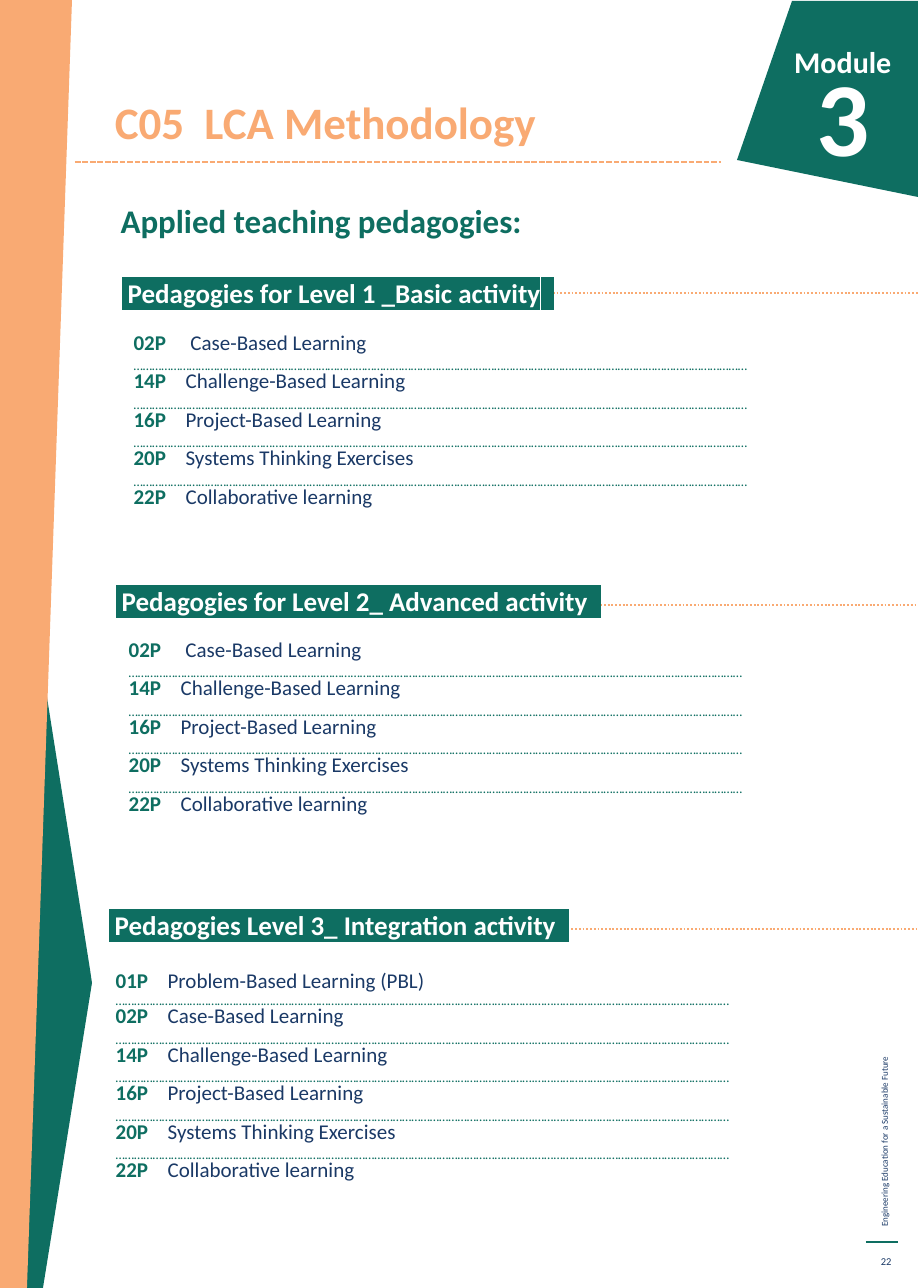
from lxml import etree
from pptx import Presentation
from pptx import util as u
from pptx.dml.color import RGBColor
from pptx.enum import dml, shapes, text
from pptx.oxml import ns

GREEN, PEACH, NAVY, WHITE = "0E6E61", "F9AA73", "1A3966", "FFFFFF"
SCALE = 914400 / 108
WIDE, HIGH = 918, 1288
RULE = "……………………………………………………………………………………………………………………….………………………………………………………"
RULE_PX = 619
COMMON = [("14P", " \tChallenge-Based Learning"), ("16P", " \tProject-Based Learning"),
          ("20P", " \tSystems Thinking Exercises"), ("22P", " \tCollaborative learning")]
CASE = [("02P", "\t Case-Based Learning")]
FIRST = [("01P", " \tProblem-Based Learning (PBL)"), ("02P", " \tCase-Based Learning")]
LEVELS = [
    (" Pedagogies for Level 1 _Basic activity", (110, 284), (276, 293), (122, 330), CASE + COMMON, 12.8),
    (" Pedagogies for Level 2_ Advanced activity", (104, 592), (271, 605), (117, 637), CASE + COMMON, 12.8),
    (" Pedagogies Level 3_ Integration activity", (97, 916), (272, 929), (104, 968), FIRST + COMMON, 10.8),
]


def px(num):
    return u.Emu(round(num * SCALE))


def color(code):
    return RGBColor.from_string(code)


class Page:
    """Holds the style and the current slide, with a method for each kind of element."""

    font = "Calibri"

    def __init__(self, deck):
        self.slide = deck.slides.add_slide(deck.slide_layouts[5])
        self.items = self.slide.shapes

    def style(self, run, size, code, bold=False):
        run.font.name, run.font.size, run.font.bold = self.font, u.Pt(size), bold
        run.font.color.rgb = color(code)

    def add(self, para, words, size, code, bold=False):
        run = para.add_run()
        run.text = words
        self.style(run, size, code, bold)
        return run

    def title(self, words, spot, size, code, lead):
        box = self.items.title
        box.left, box.top, box.width, box.height = map(px, spot)
        frame = box.text_frame
        frame.text = words
        frame.auto_size = text.MSO_AUTO_SIZE.NONE
        frame.word_wrap = True
        frame.vertical_anchor = text.MSO_ANCHOR.BOTTOM
        para = frame.paragraphs[0]
        para.alignment = text.PP_ALIGN.LEFT
        para.line_spacing = u.Pt(lead)
        self.style(para.runs[0], size, code, True)

    def frame(self, spot):
        box = self.items.add_textbox(*map(px, spot))
        box.text_frame.word_wrap = True
        return box

    def label(self, words, spot, size, code, bold=False, right=False, mid=False,
              turn=0, lead=None, before=None):
        box = self.frame(spot)
        box.rotation = turn
        box.text_frame.text = words
        if mid:
            box.text_frame.vertical_anchor = text.MSO_ANCHOR.MIDDLE
        para = box.text_frame.paragraphs[0]
        para.alignment = text.PP_ALIGN.RIGHT if right else text.PP_ALIGN.LEFT
        para.line_spacing = lead
        para.space_before = before and u.Pt(before)
        self.style(para.runs[0], size, code, bold)

    def header(self, words, left, top):
        para = self.frame((left, top, 724, 36)).text_frame.paragraphs[0]
        para.alignment = text.PP_ALIGN.JUSTIFY
        para.line_spacing = u.Pt(12.8)
        para._p.get_or_add_pPr().set("marL", str(px(1)))
        for part, code in ((words, WHITE), (". ", GREEN)):
            run = self.add(para, part, 18, code, True)
            mark = etree.Element(ns.qn("a:highlight"))
            etree.SubElement(mark, ns.qn("a:srgbClr"), val=GREEN)
            run._r.rPr.find(ns.qn("a:solidFill")).addnext(mark)

    def indent(self, para, lead):
        para.line_spacing = u.Pt(lead)
        props = para._p.get_or_add_pPr()
        props.set("marL", str(px(53)))
        props.set("indent", str(px(-52)))
        tabs = etree.SubElement(props, ns.qn("a:tabLst"))
        for stop in (52, 189):
            etree.SubElement(tabs, ns.qn("a:tab"), pos=str(px(stop)), algn="l")

    def listing(self, rows, left, top, lead):
        frame = self.frame((left, top, 717, 224)).text_frame
        para = frame.paragraphs[0]
        for num, (code, name) in enumerate(rows):
            if num:
                para = frame.add_paragraph()
                self.indent(para, lead if num == 1 else 12.8)
                run = self.add(para, RULE, 9, GREEN)
                gap = px(RULE_PX).pt / len(RULE) - 9 * 0.69
                run._r.rPr.set("spc", str(round(gap * 100)))
                para = frame.add_paragraph()
            self.indent(para, 12.8)
            self.add(para, code, 14, GREEN, True)
            self.add(para, name, 14, NAVY)

    def line(self, start, end, code, width, dash=None):
        link = self.items.add_connector(
            shapes.MSO_CONNECTOR.STRAIGHT, *map(px, start + end))
        link.line.color.rgb = color(code)
        link.line.width = u.Pt(width)
        if dash:
            link.line.dash_style = dash
        etree.SubElement(link._element.spPr, ns.qn("a:effectLst"))

    def outline(self, dots, code):
        path = self.items.build_freeform(*dots[0], scale=SCALE)
        path.add_line_segments(dots[1:], close=True)
        shape = path.convert_to_shape()
        shape.shadow.inherit = False
        shape.fill.solid()
        shape.fill.fore_color.rgb = color(code)
        shape.line.fill.background()


def main():
    deck = Presentation()
    deck.slide_width, deck.slide_height = px(WIDE), px(HIGH)
    page = Page(deck)
    page.title("C05  LCA Methodology", (104, 41, 579, 113), 30, PEACH, 26.8)
    page.label("Engineering Education for a Sustainable Future",
               (642, 984, 485, 22), 6, NAVY, turn=270)
    page.line((866, 1242), (898, 1242), GREEN, 0.75)
    page.label("22", (866, 1246, 36, 31), 7, NAVY, right=True, mid=True)
    page.outline([(43, HIGH), (25, HIGH), (25, 558), (90, 969), (92, 983)], GREEN)
    page.outline([(0, 0), (72, 0), (27, HIGH), (0, HIGH)], PEACH)
    page.label("Applied teaching pedagogies:", (110, 200, 598, 113), 22, GREEN,
               bold=True, lead=0.9, before=8.5)
    for words, head, start, spot, rows, lead in LEVELS:
        page.line(start, (WIDE, start[1]), PEACH, 1.25, dml.MSO_LINE.ROUND_DOT)
        page.header(words, *head)
        page.listing(rows, *spot, lead)
    page.outline([(WIDE, 1), (792, 1), (737, 160), (WIDE, 197)], GREEN)
    page.label("Module", (708, 38, 194, 153), 20, WHITE, bold=True, right=True, before=22.7)
    page.line((75, 162), (721, 162), PEACH, 1.25, dml.MSO_LINE.SQUARE_DOT)
    page.label("3", (686, 46, 194, 153), 70, WHITE, bold=True, right=True, before=22.7)
    deck.save("out.pptx")


if __name__ == "__main__":
    main()
